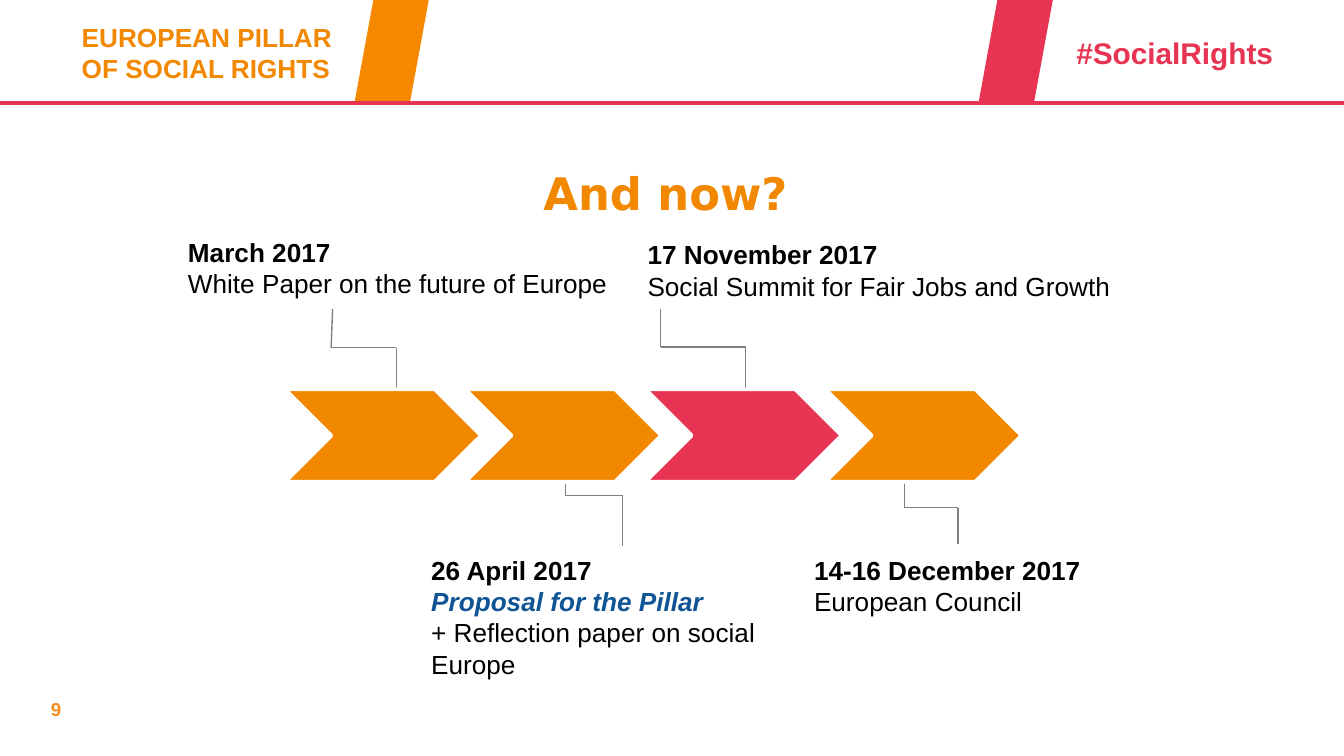
from itertools import pairwise

from lxml.etree import SubElement
from pptx import Presentation
from pptx.dml.color import RGBColor
from pptx.enum.shapes import MSO_CONNECTOR, MSO_SHAPE
from pptx.enum.text import MSO_ANCHOR, PP_ALIGN
from pptx.oxml.ns import qn
from pptx.util import Pt

COLORS = {
    "orange": "F18800",
    "band": "F68800",
    "number": "F68B20",
    "red": "E73452",
    "blue": "0F5494",
    "grey": "808080",
    "black": "000000",
    "white": "FFFFFF",
}
RGB = {name: RGBColor.from_string(value) for name, value in COLORS.items()}

prs = Presentation()
prs.slide_width, prs.slide_height = Pt(720), Pt(405)
slide = prs.slides.add_slide(prs.slide_layouts[5])
shapes = slide.shapes


def add_text(left, top, width, height, lines, size, wrap=True):
    """Add a text box; each line is (text, colour, bold, italic)."""
    frame = shapes.add_textbox(Pt(left), Pt(top), Pt(width), Pt(height)).text_frame
    frame.word_wrap = wrap
    for index, (text, color, bold, italic) in enumerate(lines):
        paragraph = frame.add_paragraph() if index else frame.paragraphs[0]
        paragraph.text = text
        font = paragraph.font
        font.name, font.size = "Arial", Pt(size)
        font.bold, font.italic = bold, italic
        font.color.rgb = RGB[color]


def add_line(start, end, color, weight):
    line = shapes.add_connector(
        MSO_CONNECTOR.STRAIGHT, *(Pt(value) for value in (*start, *end))
    )
    line.line.color.rgb = RGB[color]
    line.line.width = Pt(weight)
    SubElement(line._element.spPr, qn("a:effectLst"))


# Header band and slide number
for left, top, width, height, text, size, color in [
    (20.2, 370.1, 157, 19.4, "9", 10, "number"),
    (36.7, 7.9, 183, 41, "EUROPEAN PILLAR\vOF SOCIAL RIGHTS", 14, "orange"),
    (569.5, 15.1, 124.6, 26.6, "#SocialRights", 16, "red"),
]:
    add_text(left, top, width, height, [(text, color, True, False)], size)

add_line((0, 55.1), (720, 55.1), "red", 2.25)
for left, color in [(190.1, "band"), (524.4, "red")]:
    slant = shapes.add_shape(MSO_SHAPE.PARALLELOGRAM, Pt(left), Pt(0), Pt(39.6), Pt(54))
    slant.shadow.inherit = False
    slant.fill.solid()
    slant.fill.fore_color.rgb = RGB[color]
    slant.line.fill.background()

# Title
title = shapes.title
title.left, title.top, title.width, title.height = Pt(36.7), Pt(77.8), Pt(648), Pt(51.1)
title.text_frame.text = "And now? "
title.text_frame.vertical_anchor = MSO_ANCHOR.MIDDLE
heading = title.text_frame.paragraphs[0]
heading.alignment = PP_ALIGN.CENTER
heading.font.name, heading.font.size, heading.font.bold = "DejaVu Sans", Pt(24), True
heading.font.color.rgb = RGB["orange"]

# Elbow lines between the milestones and their arrows
for elbow in [
    [(178.2, 165.6), (177.4, 186.3), (212.3, 186.3), (212.3, 214.6)],
    [(303, 248.4), (303, 265.6), (333.6, 265.6), (333.6, 292.3)],
    [(354, 165.6), (354, 186), (399.5, 186), (399.5, 214.6)],
    [(484.7, 257.8), (484.7, 272), (513.2, 272), (513.2, 291.6)],
]:
    for start, end in pairwise(elbow):
        add_line(start, end, "grey", 0.75)

# Milestones: left, top, width, height, wrap, date, further lines
for left, top, width, height, wrap, date, details in [
    (93.6, 123.1, 239.8, 41, False, "March 2017",
     [("White Paper on the future of Europe", "black", False, False)]),
    (223.9, 293.3, 223.9, 74.9, True, "26 April 2017",
     [("Proposal for the Pillar", "blue", True, True),
      ("+ Reflection paper on social Europe", "black", False, False)]),
    (339.8, 124.3, 265.7, 41, True, "17 November 2017",
     [("Social Summit for Fair Jobs and Growth", "black", False, False)]),
    (429, 293.3, 265.7, 41, True, "14-16 December 2017",
     [("European Council", "black", False, False)]),
]:
    lines = [(date, "black", True, False), *details]
    add_text(left, top, width, height, lines, 14, wrap)

# Timeline arrows
for step, color in enumerate(["orange", "orange", "red", "orange"]):
    arrow = shapes.add_shape(
        MSO_SHAPE.CHEVRON, Pt(152.8 + 96.5 * step), Pt(208.6), Pt(105), Pt(49.5)
    )
    arrow.shadow.inherit = False
    arrow.fill.solid()
    arrow.fill.fore_color.rgb = RGB[color]
    arrow.line.color.rgb = RGB["white"]
    arrow.line.width = Pt(2)

prs.save("out.pptx")
